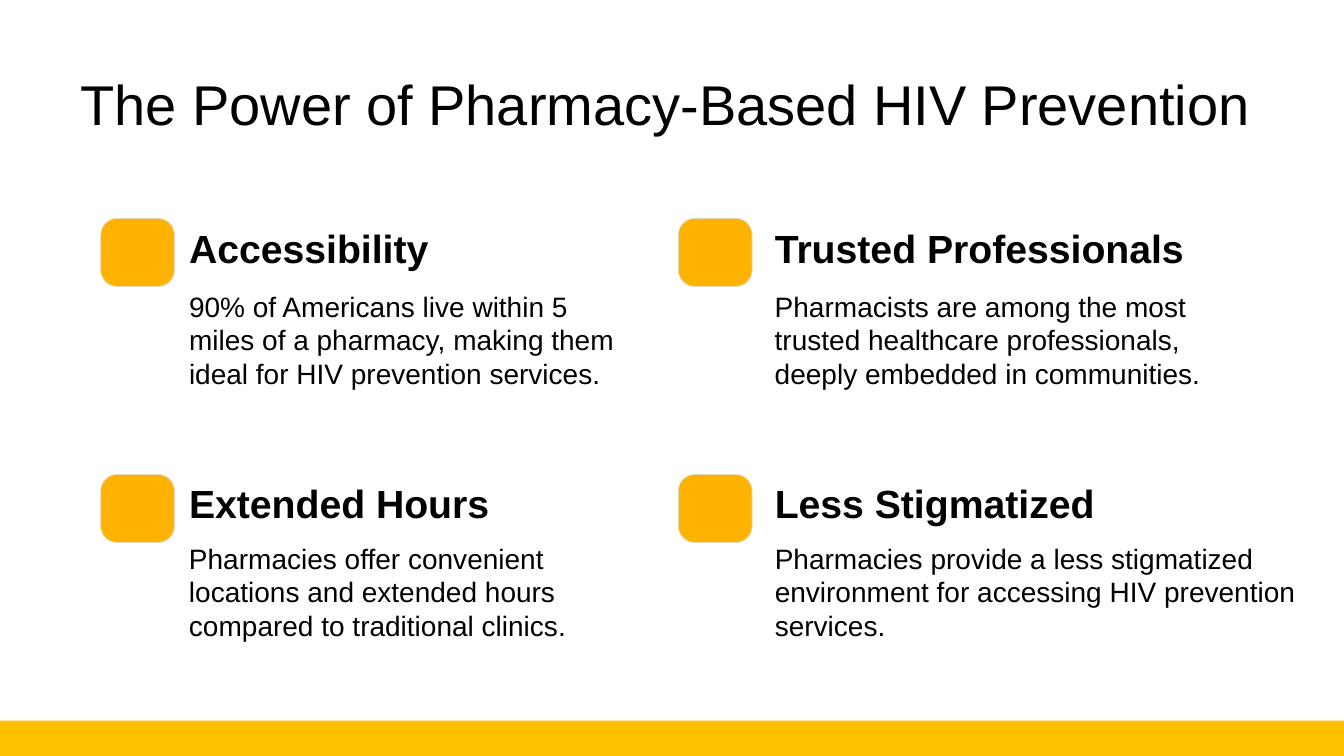
import pptx
import pptx.util
import pptx.dml.color
import pptx.enum.shapes
import pptx.enum.text

Pt = pptx.util.Pt
SHAPE = pptx.enum.shapes.MSO_SHAPE
ANCHOR = pptx.enum.text.MSO_ANCHOR

# Content
TITLE = "The Power of Pharmacy-Based HIV Prevention"
# Row by row: heading, body, body width, body height
BENEFITS = [
    [
        ("Accessibility",
         "90% of Americans live within 5 miles of a pharmacy, making them "
         "ideal for HIV prevention services.", 317.5, 82.8),
        ("Trusted Professionals",
         "Pharmacists are among the most trusted healthcare professionals, "
         "deeply embedded in communities.", 324, 95),
    ],
    [
        ("Extended Hours",
         "Pharmacies offer convenient locations and extended hours compared "
         "to traditional clinics.", 302.4, 95),
        ("Less Stigmatized",
         "Pharmacies provide a less stigmatized environment for accessing "
         "HIV prevention services.", 390.2, 95),
    ],
]

# Layout and style
SLIDE_W, SLIDE_H = 960, 540
BAR_H = 25.2
BADGE_W, BADGE_H = 52.6, 48.6
HEADING_W, HEADING_H = 320, 23
COLUMNS = [(72, 135), (484.6, 553.4)]                      # badge, text
ROWS = [(156, 170.9, 206.9), (338.9, 353.1, 387)]          # badge, heading, body
FONT = "Arial"
BLACK, BAR_COLOR, BADGE_COLOR, BADGE_EDGE = "000000", "FFC000", "FFB300", "E5D8B2"


def color(hex_string):
    return pptx.dml.color.RGBColor.from_string(hex_string)


def add_block(kind, left, top, width, height, fill):
    block = slide.shapes.add_shape(kind, Pt(left), Pt(top), Pt(width), Pt(height))
    block.shadow.inherit = False
    block.fill.solid()
    block.fill.fore_color.rgb = color(fill)
    block.line.fill.background()
    return block


def add_text(words, left, top, width, height, size, spacing, bold=False):
    frame = slide.shapes.add_textbox(Pt(left), Pt(top), Pt(width), Pt(height)).text_frame
    frame.word_wrap = True
    frame.margin_left = frame.margin_right = Pt(0)
    frame.margin_top = frame.margin_bottom = Pt(0)
    paragraph = frame.paragraphs[0]
    paragraph.line_spacing = spacing
    run = paragraph.add_run()
    run.text = words
    run.font.name = FONT
    run.font.size = Pt(size)
    run.font.bold = bold
    run.font.color.rgb = color(BLACK)
    return frame


presentation = pptx.Presentation()
presentation.slide_width, presentation.slide_height = Pt(SLIDE_W), Pt(SLIDE_H)
slide = presentation.slides.add_slide(presentation.slide_layouts[6])

# Bottom bar and title
add_block(SHAPE.RECTANGLE, 0, SLIDE_H - BAR_H, SLIDE_W, BAR_H, BAR_COLOR)
title = add_text(TITLE, 50.4, 51.8, 859, 57.6, 40, 0.9)
title.vertical_anchor = ANCHOR.MIDDLE
title.margin_left = title.margin_right = title.margin_bottom = Pt(7.2)

# Benefit grid
for (badge_top, heading_top, body_top), benefits in zip(ROWS, BENEFITS):
    for (badge_left, text_left), benefit in zip(COLUMNS, benefits):
        heading, body, body_w, body_h = benefit
        badge = add_block(SHAPE.ROUNDED_RECTANGLE, badge_left, badge_top,
                          BADGE_W, BADGE_H, BADGE_COLOR)
        badge.adjustments[0] = 0.24
        badge.line.color.rgb = color(BADGE_EDGE)
        badge.line.width = Pt(0.6)
        add_text(heading, text_left, heading_top, HEADING_W, HEADING_H, 28, Pt(22.9),
                 bold=True)
        add_text(body, text_left, body_top, body_w, body_h, 20, Pt(23.8))

presentation.save("out.pptx")
